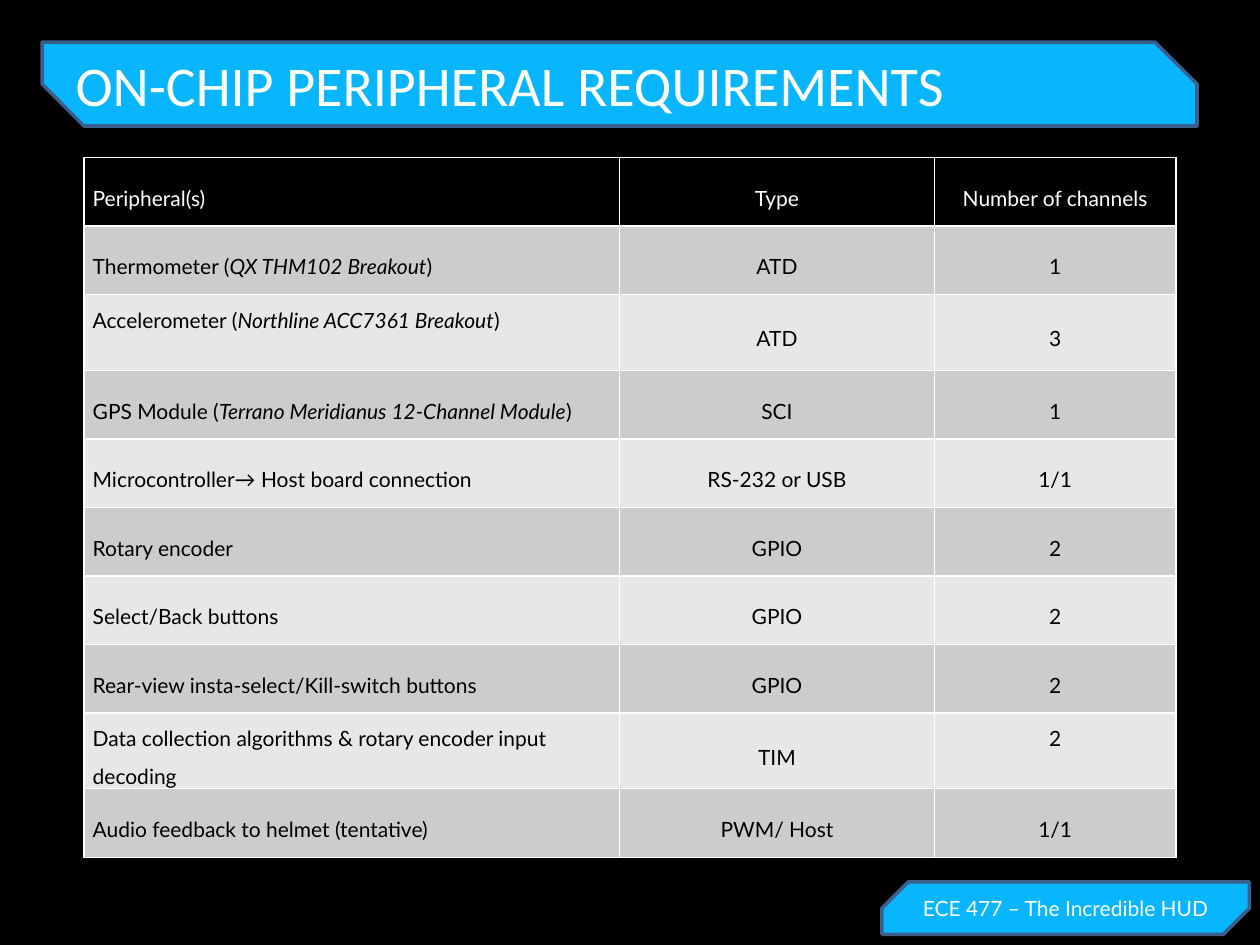
import pptx
import pptx.dml.color
import pptx.enum.shapes
import pptx.enum.text
import pptx.oxml
import pptx.oxml.ns
import pptx.util

Pt = pptx.util.Pt
RGBColor = pptx.dml.color.RGBColor
Align = pptx.enum.text.PP_ALIGN
Anchor = pptx.enum.text.MSO_ANCHOR

BLACK = RGBColor(0x00, 0x00, 0x00)
WHITE = RGBColor(0xFF, 0xFF, 0xFF)
SKY = RGBColor(0x07, 0xB6, 0xFE)
NAVY = RGBColor(0x3A, 0x5F, 0x8C)
DARK_BAND = RGBColor(0xCC, 0xCC, 0xCC)
LIGHT_BAND = RGBColor(0xE7, 0xE7, 0xE7)

COLUMN_WIDTHS = [306, 180, 138]
ROW_HEIGHT = 39.2
LINE_HEIGHT = 21.6
TALL_ROWS = {2, 8}
RAISED_CELLS = {(2, 0), (8, 2)}

HEADINGS = ["Peripheral(s)", "Type", "Number of channels"]
PERIPHERALS = [
    ("Thermometer", "QX THM102 Breakout", "ATD", "1"),
    ("Accelerometer", "Northline ACC7361 Breakout", "ATD", "3"),
    ("GPS Module", "Terrano Meridianus 12-Channel Module", "SCI", "1"),
    ("Microcontroller→ Host board connection", "", "RS-232 or USB", "1/1"),
    ("Rotary encoder", "", "GPIO", "2"),
    ("Select/Back buttons", "", "GPIO", "2"),
    ("Rear-view insta-select/Kill-switch buttons", "", "GPIO", "2"),
    ("Data collection algorithms & rotary encoder input decoding", "", "TIM", "2"),
    ("Audio feedback to helmet (tentative)", "", "PWM/ Host", "1/1"),
]


def add_run(paragraph, text, size, font, color, italic=False):
    run = paragraph.add_run()
    run.text = text
    run.font.size = Pt(size)
    run.font.name = font
    run.font.italic = italic
    run.font.color.rgb = color


def add_banner(slide, left, top, width, height, snips):
    shape = slide.shapes.add_shape(
        pptx.enum.shapes.MSO_SHAPE.SNIP_2_DIAG_RECTANGLE,
        Pt(left), Pt(top), Pt(width), Pt(height))
    shape.adjustments[0], shape.adjustments[1] = snips
    shape.shadow.inherit = False
    shape.fill.solid()
    shape.fill.fore_color.rgb = SKY
    shape.line.color.rgb = NAVY
    shape.line.width = Pt(2)
    return shape


def add_footer(slide):
    banner = add_banner(slide, 504, 504, 210, 30, (0.5, 0))
    banner.text_frame.vertical_anchor = Anchor.MIDDLE
    paragraph = banner.text_frame.paragraphs[0]
    paragraph.alignment = Align.CENTER
    add_run(paragraph, "ECE 477 – The Incredible HUD", 12, "Lato", WHITE)


def add_title(slide):
    add_banner(slide, 24, 24, 660, 48, (0, 0.5))
    title = slide.shapes.title
    title.left, title.top, title.width, title.height = Pt(36), Pt(24), Pt(636), Pt(48)
    slide.shapes._spTree.append(title._element)
    frame = title.text_frame
    frame.auto_size = pptx.enum.text.MSO_AUTO_SIZE.NONE
    frame.vertical_anchor = Anchor.MIDDLE
    paragraph = frame.paragraphs[0]
    paragraph.alignment = Align.LEFT
    add_run(paragraph, "ON-CHIP PERIPHERAL REQUIREMENTS", 32, "Calibri", WHITE)


def add_borders(cell):
    properties = cell._tc.get_or_add_tcPr()
    for index, side in enumerate(("lnL", "lnR", "lnT", "lnB")):
        border = pptx.oxml.parse_xml(
            f'<a:{side} {pptx.oxml.ns.nsdecls("a")} w="{Pt(1)}"><a:solidFill>'
            f'<a:srgbClr val="{WHITE}"/></a:solidFill></a:{side}>')
        properties.insert(index, border)


def fill_cell(cell, runs, alignment, background, color, bottom):
    cell.fill.solid()
    cell.fill.fore_color.rgb = background
    add_borders(cell)
    cell.vertical_anchor = Anchor.MIDDLE
    cell.margin_left = cell.margin_right = Pt(5)
    cell.margin_top = Pt(0)
    cell.margin_bottom = Pt(bottom)
    paragraph = cell.text_frame.paragraphs[0]
    paragraph.alignment = alignment
    paragraph.line_spacing = 1.5
    for text, italic in runs:
        add_run(paragraph, text, 12, "Lato", color, italic)


def peripheral_runs(name, part):
    if not part:
        return [(name, False)]
    return [(f"{name} (", False), (part, True), (")", False)]


def add_peripheral_table(slide):
    rows = [[[(heading, False)] for heading in HEADINGS]]
    for name, part, kind, channels in PERIPHERALS:
        rows.append([peripheral_runs(name, part), [(kind, False)], [(channels, False)]])
    heights = [2 * LINE_HEIGHT if index in TALL_ROWS else ROW_HEIGHT
               for index in range(len(rows))]
    table = slide.shapes.add_table(
        len(rows), len(COLUMN_WIDTHS), Pt(48), Pt(90),
        Pt(sum(COLUMN_WIDTHS)), Pt(sum(heights))).table
    for column, width in zip(table.columns, COLUMN_WIDTHS):
        column.width = Pt(width)
    for row_index, row in enumerate(rows):
        table.rows[row_index].height = Pt(heights[row_index])
        background = DARK_BAND if row_index % 2 else LIGHT_BAND
        color = BLACK
        if row_index == 0:
            background, color = BLACK, WHITE
        for column_index, runs in enumerate(row):
            alignment = Align.CENTER if column_index else Align.LEFT
            bottom = LINE_HEIGHT if (row_index, column_index) in RAISED_CELLS else 0
            fill_cell(table.cell(row_index, column_index), runs,
                      alignment, background, color, bottom)


def main():
    presentation = pptx.Presentation()
    presentation.slide_width = Pt(720)
    presentation.slide_height = Pt(540)
    slide = presentation.slides.add_slide(presentation.slide_layouts[5])
    slide.background.fill.solid()
    slide.background.fill.fore_color.rgb = BLACK
    add_footer(slide)
    add_title(slide)
    add_peripheral_table(slide)
    presentation.save("out.pptx")


if __name__ == "__main__":
    main()
